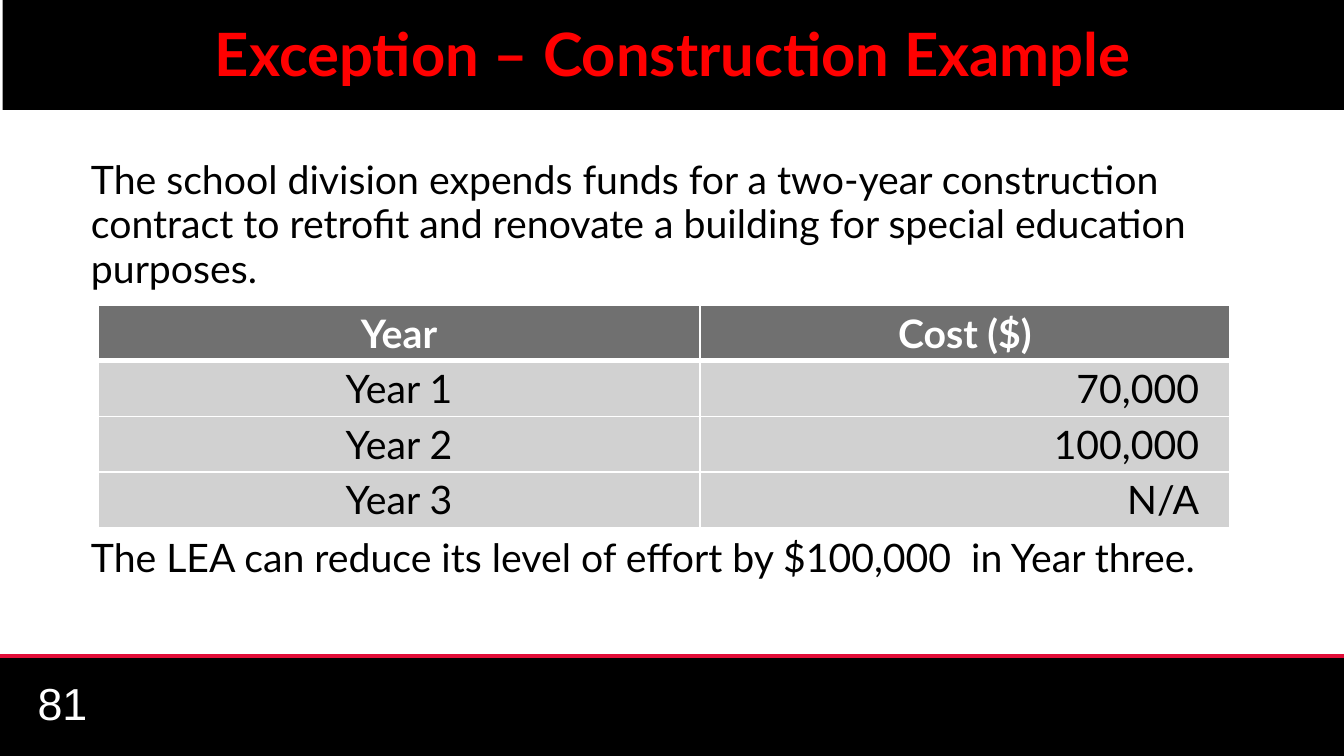
from dataclasses import dataclass

from lxml.etree import SubElement as Sub
from pptx import Presentation
from pptx.dml.color import RGBColor as RGB
from pptx.enum.shapes import MSO_CONNECTOR as Conn, MSO_SHAPE as Shape
from pptx.enum.text import MSO_ANCHOR as Anchor, PP_ALIGN as Align
from pptx.oxml.ns import qn
from pptx.util import Cm, Pt


@dataclass(frozen=True)
class Theme:
    black: str = "000000"
    white: str = "FFFFFF"
    red: str = "FF0000"
    rule: str = "E20D38"
    head: str = "707070"
    row: str = "D1D1D1"
    font: str = "Lato"
    plain: str = "Arial"
    title: int = 32
    body: int = 21
    page: int = 24


class Deck:
    def __init__(self, theme, wide, high):
        self.theme = theme
        self.prs = Presentation()
        self.prs.slide_width, self.prs.slide_height = Cm(wide), Cm(high)
        self.slide = self.prs.slides.add_slide(self.prs.slide_layouts[6])

    def put(self, frame, text, color, size, font=None, bold=False, align=Align.LEFT):
        """Put one styled paragraph into a text frame."""
        para = frame.paragraphs[0]
        para.alignment = align
        run = para.add_run()
        run.text = text
        look = {"name": font or self.theme.font, "size": Pt(size), "bold": bold}
        for key, value in look.items():
            setattr(run.font, key, value)
        run.font.color.rgb = RGB.from_string(color)
        return para

    def bar(self, x, y, w, h):
        box = self.slide.shapes.add_shape(Shape.RECTANGLE, Cm(x), Cm(y), Cm(w), Cm(h))
        box.shadow.inherit = False
        box.fill.solid()
        box.fill.fore_color.rgb = RGB.from_string(self.theme.black)
        box.line.fill.background()
        return box

    def rule(self, x, y, w):
        line = self.slide.shapes.add_connector(
            Conn.STRAIGHT, Cm(x), Cm(y), Cm(x + w), Cm(y))
        line.line.color.rgb = RGB.from_string(self.theme.rule)
        line.line.width = Pt(2)
        Sub(line._element.spPr, qn("a:effectLst"))

    def title(self, text, x, y, w, h):
        frame = self.bar(x, y, w, h).text_frame
        look = {"margin_left": Cm(1.27), "margin_right": Cm(1.27), "margin_top": 0,
                "margin_bottom": Cm(0.08), "vertical_anchor": Anchor.MIDDLE,
                "word_wrap": True}
        for key, value in look.items():
            setattr(frame, key, value)
        self.put(frame, text, self.theme.red, self.theme.title,
                 bold=True, align=Align.CENTER)

    def text(self, text, x, y, w, h, anchor=Anchor.TOP, **style):
        frame = self.slide.shapes.add_textbox(Cm(x), Cm(y), Cm(w), Cm(h)).text_frame
        frame.word_wrap = True
        frame.vertical_anchor = anchor
        look = {"color": self.theme.black, "size": self.theme.body} | style
        self.put(frame, text, **look).line_spacing = 0.95

    def edges(self, cell, top, bottom):
        """Draw the four cell borders; top and bottom are widths in points."""
        props = cell._tc.get_or_add_tcPr()
        for side, width in {"L": 1, "R": 1, "T": top, "B": bottom}.items():
            line = Sub(props, qn(f"a:ln{side}"), w=str(Pt(width)))
            Sub(Sub(line, qn("a:solidFill")), qn("a:srgbClr"), val=self.theme.white)

    def table(self, rows, x, y, widths, high):
        grid = self.slide.shapes.add_table(
            len(rows), len(widths), Cm(x), Cm(y),
            Cm(sum(widths)), Cm(high * len(rows))).table
        for col, width in zip(grid.columns, widths):
            col.width = Cm(width)
        for r, row in enumerate(rows):
            grid.rows[r].height = Cm(high)
            head = r == 0
            for c, value in enumerate(row):
                cell = grid.cell(r, c)
                cost = c == 1 and not head
                side = Cm(0.58 if cost else 0.15)
                look = {"margin_left": side, "margin_right": side,
                        "margin_top": Cm(0.08), "margin_bottom": Cm(0.08),
                        "vertical_anchor": Anchor.MIDDLE}
                for key, item in look.items():
                    setattr(cell, key, item)
                self.edges(cell, 3 if r == 1 else 1, 3 if head else 1)
                cell.fill.solid()
                cell.fill.fore_color.rgb = RGB.from_string(
                    self.theme.head if head else self.theme.row)
                self.put(cell.text_frame, value,
                         self.theme.white if head else self.theme.black,
                         self.theme.body, bold=head,
                         align=Align.RIGHT if cost else Align.CENTER)


def main():
    theme = Theme()
    wide, high, foot = 25.4, 14.29, 12.4
    deck = Deck(theme, wide, high)
    deck.bar(0, foot, wide, high - foot)
    deck.rule(0, foot, wide)
    deck.text("81", 0.46, 12.95, 5.92, 0.76, Anchor.MIDDLE,
              color=theme.white, size=theme.page, font=theme.plain)
    deck.title("Exception – Construction Example", 0.05, 0, 25.35, 2.08)
    deck.text("The school division expends funds for a two-year construction contract "
              "to retrofit and renovate a building for special education purposes.",
              1.47, 2.87, 23.06, 2.8)
    deck.table([("Year", "Cost ($)"), ("Year 1", "70,000"),
                ("Year 2", "100,000"), ("Year 3", "N/A")],
               1.85, 5.77, (11.38, 10.01), 1.04)
    deck.text("The LEA can reduce its level of effort by $100,000  in Year three.",
              1.47, 10.03, 23.06, 1.1)
    deck.prs.save("out.pptx")


if __name__ == "__main__":
    main()
